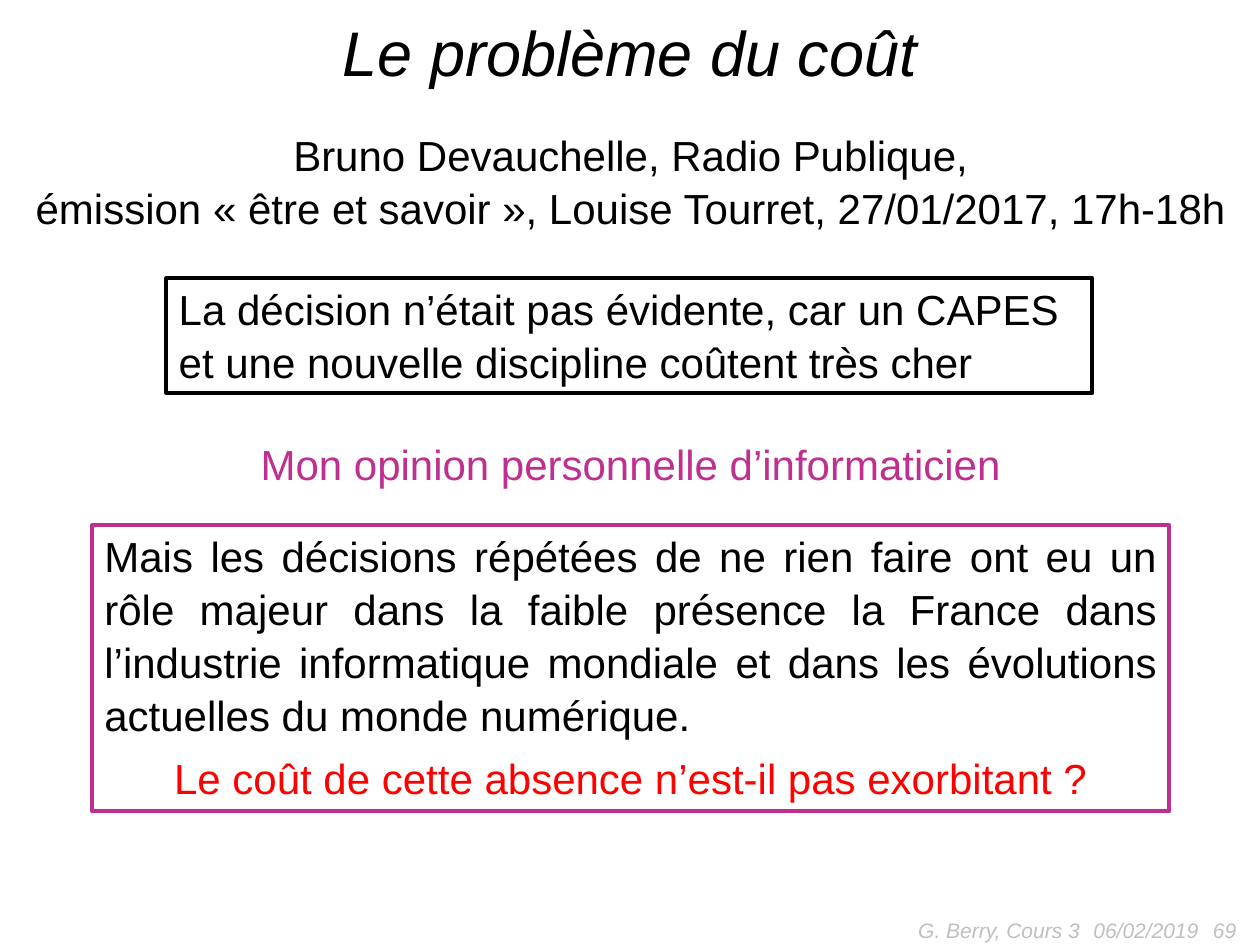
from dataclasses import dataclass
from pptx import Presentation
from pptx.dml.color import RGBColor
from pptx.enum.shapes import MSO_SHAPE
from pptx.enum.text import MSO_ANCHOR, MSO_AUTO_SIZE, PP_ALIGN
from pptx.util import Inches, Pt


@dataclass(frozen=True)
class Theme:
    font: str = "Arial"
    black: str = "000000"
    magenta: str = "BF2F8F"
    red: str = "FF0000"
    gray: str = "BFBFBF"
    title_size: int = 36
    body_size: int = 24
    footer_size: int = 12
    border: float = 2.25
    line_spacing: float = 1.05


THEME = Theme()
LEFT, CENTER, RIGHT, JUSTIFY = PP_ALIGN.LEFT, PP_ALIGN.CENTER, PP_ALIGN.RIGHT, PP_ALIGN.JUSTIFY

TITLE = "Le problème du coût"
BLOCKS = [
    dict(area=(0.11, 0.99, 9.79, 0.91), wrap=False, border=None, lines=[
        ("Bruno Devauchelle, Radio Publique,", CENTER, THEME.black, 0),
        ("émission « être et savoir », Louise Tourret, 27/01/2017, 17h-18h", CENTER, THEME.black, 0),
    ]),
    dict(area=(1.32, 2.21, 7.35, 0.91), wrap=False, border=THEME.black, lines=[
        ("La décision n’était pas évidente, car un CAPES", JUSTIFY, THEME.black, 0),
        ("et une nouvelle discipline coûtent très cher", JUSTIFY, THEME.black, 0),
    ]),
    dict(area=(1.85, 3.44, 6.31, 0.49), wrap=True, border=None, lines=[
        ("Mon opinion personnelle d’informaticien", CENTER, THEME.magenta, 0),
    ]),
    dict(area=(0.73, 4.17, 8.55, 2.27), wrap=True, border=THEME.magenta, lines=[
        ("Mais les décisions répétées de ne rien faire ont eu un rôle majeur dans la faible "
         "présence la France dans l’industrie informatique mondiale et dans les évolutions "
         "actuelles du monde numérique.", JUSTIFY, THEME.black, 0),
        ("Le coût de cette absence n’est-il pas exorbitant ?", CENTER, THEME.red, 6),
    ]),
]
FOOTER_TOP, FOOTER_HEIGHT = 7.18, 0.4
FOOTERS = [
    ("G. Berry, Cours 3", 5.5, 3.17, RIGHT),
    ("06/02/2019", 8.58, 1.1, LEFT),
    ("69", 9.3, 0.61, RIGHT),
]


def add_span(para, text, size, color, italic=False):
    span = para.add_run()
    span.text = text
    span.font.name = THEME.font
    span.font.size = Pt(size)
    span.font.italic = italic
    span.font.color.rgb = RGBColor.from_string(color)


def add_block(page, area, wrap, border, lines):
    place = [Inches(value) for value in area]
    if border:
        box = page.shapes.add_shape(MSO_SHAPE.RECTANGLE, *place)
        box.shadow.inherit = False
        box.fill.background()
        box.line.color.rgb = RGBColor.from_string(border)
        box.line.width = Pt(THEME.border)
    else:
        box = page.shapes.add_textbox(*place)
    frame = box.text_frame
    frame.word_wrap = wrap
    frame.auto_size = MSO_AUTO_SIZE.SHAPE_TO_FIT_TEXT
    frame.vertical_anchor = MSO_ANCHOR.TOP
    frame.margin_left = frame.margin_right = Inches(0.1)
    frame.margin_top, frame.margin_bottom = Inches(0.02), Inches(0.07)
    for index, (text, alignment, color, space_before) in enumerate(lines):
        para = frame.add_paragraph() if index else frame.paragraphs[0]
        para.alignment = alignment
        para.line_spacing = THEME.line_spacing
        if space_before:
            para.space_before = Pt(space_before)
        add_span(para, text, THEME.body_size, color)


def add_title(page):
    title = page.shapes.title
    title.left, title.top = Inches(0.25), Inches(0.05)
    title.width, title.height = Inches(9.5), Inches(0.71)
    frame = title.text_frame
    frame.word_wrap = True
    frame.auto_size = MSO_AUTO_SIZE.SHAPE_TO_FIT_TEXT
    frame.vertical_anchor = MSO_ANCHOR.MIDDLE
    para = frame.paragraphs[0]
    para.alignment = CENTER
    add_span(para, TITLE, THEME.title_size, THEME.black, italic=True)


def add_footer(page, text, left, width, alignment):
    box = page.shapes.add_textbox(
        Inches(left), Inches(FOOTER_TOP), Inches(width), Inches(FOOTER_HEIGHT))
    frame = box.text_frame
    frame.word_wrap = True
    frame.vertical_anchor = MSO_ANCHOR.MIDDLE
    para = frame.paragraphs[0]
    para.alignment = alignment
    add_span(para, text, THEME.footer_size, THEME.gray, italic=True)


def main():
    deck = Presentation()
    deck.slide_width, deck.slide_height = Inches(10), Inches(7.5)
    page = deck.slides.add_slide(deck.slide_layouts.get_by_name("Title Only"))
    add_title(page)
    for block in BLOCKS:
        add_block(page, **block)
    for footer in FOOTERS:
        add_footer(page, *footer)
    deck.save("out.pptx")


if __name__ == "__main__":
    main()
